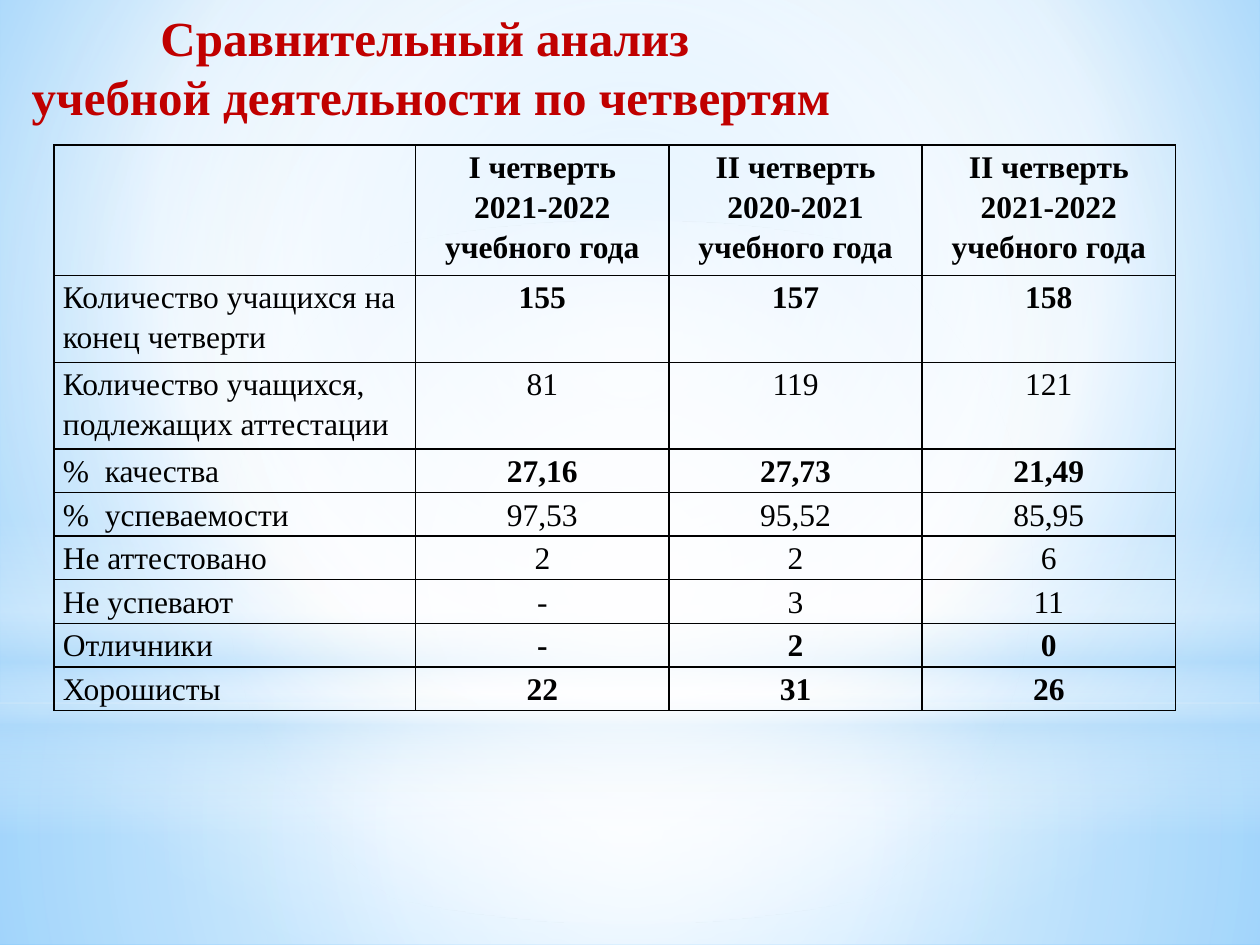
from pptx import Presentation, util as u
from pptx.dml.color import RGBColor
from pptx.enum import shapes, text
from pptx.oxml import parse_xml
from pptx.oxml.ns import nsdecls, qn

COLORS = {"title": "C00000", "ink": "000000", "white": "FFFFFF",
          "sky": "B4DCFA", "light": "9ED5FF", "deep": "5BB9FF"}
FONT = "Times New Roman"
WIDTH, HEIGHT = 10, 7.5

TITLE = ["Сравнительный анализ ", "учебной деятельности по четвертям"]
HEADER = ["", "I четверть\n2021-2022 учебного года",
          "II четверть\n2020-2021 учебного года",
          "II четверть\n2021-2022 учебного года"]
# label, values, bold values
RESULTS = [
    ("Количество учащихся на конец четверти", ["155", "157", "158"], True),
    ("Количество учащихся,\nподлежащих аттестации", ["81", "119", "121"], False),
    ("%  качества", ["27,16", "27,73", "21,49"], True),
    ("%  успеваемости", ["97,53", "95,52", "85,95"], False),
    ("Не аттестовано", ["2", "2", "6"], False),
    ("Не успевают", ["-", "3", "11"], False),
    ("Отличники", ["-", "2", "0"], True),
    ("Хорошисты", ["22", "31", "26"], True),
]
ROW_LINES = [3, 2, 2, 1, 1, 1, 1, 1, 1]
LINE_HEIGHT = 0.345
COLUMNS = [2.87, 2.01, 2.01, 2.01]

# Gradient stops: position %, colour, opacity %
BACKDROP = [(0, "light", 100), (60, "white", 100), (100, "deep", 100)]
CENTRE = (50, 50, 50, 50)
# shape, top and height as shares of the slide, stops, centre (None: vertical)
GLOWS = [
    ("RECTANGLE", 0.744, 0.256,
     [(0, "white", 91), (37, "white", 76), (100, "sky", 79)], CENTRE),
    ("RECTANGLE", 0, 0.744,
     [(0, "white", 89), (48, "white", 62), (100, "sky", 79)], CENTRE),
    ("RECTANGLE", 0.55, 0.333,
     [(0, "white", 0), (29, "white", 30), (45, "sky", 40),
      (55, "white", 26), (65, "sky", 60), (100, "white", 0)], None),
    ("OVAL", 0.233, 0.744, [(0, "white", 100), (56, "white", 0)], CENTRE),
]


def set_gradient(parent, stops, centre):
    """Swap the solid fill inside parent for a gradient."""
    marks = "".join(
        f'<a:gs pos="{pos * 1000}"><a:srgbClr val="{COLORS[name]}">'
        f'<a:alpha val="{alpha * 1000}"/></a:srgbClr></a:gs>'
        for pos, name, alpha in stops)
    if centre:
        sides = " ".join(f'{side}="{share * 1000}"' for side, share in zip("ltrb", centre))
        course = f'<a:path path="circle"><a:fillToRect {sides}/></a:path>'
    else:
        course = '<a:lin ang="5400000" scaled="0"/>'
    solid = parent.find(qn("a:solidFill"))
    parent.replace(solid, parse_xml(
        f'<a:gradFill {nsdecls("a")} rotWithShape="1"><a:gsLst>{marks}</a:gsLst>'
        f'{course}</a:gradFill>'))


def style(para, size, color, bold, align):
    para.alignment = align
    para.font.name, para.font.size, para.font.bold = FONT, u.Pt(size), bold
    para.font.color.rgb = RGBColor.from_string(COLORS[color])


def fill_cell(cell, words, bold, align):
    cell.margin_left = cell.margin_right = u.Inches(0.07)
    cell.margin_top = cell.margin_bottom = 0
    cell.text = words
    for para in cell.text_frame.paragraphs:
        style(para, 18, "ink", bold, align)
        para.line_spacing = 1.15
    props = cell._tc.get_or_add_tcPr()
    for side in "LRTB":
        props.append(parse_xml(
            f'<a:ln{side} {nsdecls("a")} w="12700"><a:solidFill>'
            f'<a:srgbClr val="{COLORS["ink"]}"/></a:solidFill></a:ln{side}>'))
    cell.fill.background()


def add_backdrop(page):
    page.background.fill.solid()
    set_gradient(page._element.find(".//" + qn("p:bgPr")), BACKDROP, (20, 10, 20, 60))
    for kind, top, height, stops, centre in GLOWS:
        glow = page.shapes.add_shape(
            shapes.MSO_SHAPE[kind], 0, u.Inches(top * HEIGHT),
            u.Inches(WIDTH), u.Inches(height * HEIGHT))
        glow.shadow.inherit = False
        glow.line.fill.background()
        glow.fill.solid()
        set_gradient(glow._element.spPr, stops, centre)


def add_title(page):
    box = page.shapes.add_textbox(u.Inches(0.12), u.Inches(0.01), u.Inches(6.6), u.Inches(1.51))
    frame = box.text_frame
    frame.word_wrap = False
    frame.vertical_anchor = text.MSO_ANCHOR.TOP
    frame.text = "\n".join(TITLE)
    for para in frame.paragraphs:
        style(para, 28, "title", True, text.PP_ALIGN.CENTER)


def add_results(page):
    rows = [(HEADER[0], HEADER[1:], True)] + RESULTS
    table = page.shapes.add_table(
        len(rows), len(COLUMNS), u.Inches(0.43), u.Inches(1.15),
        u.Inches(sum(COLUMNS)), u.Inches(sum(ROW_LINES) * LINE_HEIGHT)).table
    table.first_row = table.horz_banding = False
    for column, width in zip(table.columns, COLUMNS):
        column.width = u.Inches(width)
    for row, lines, (label, values, bold) in zip(table.rows, ROW_LINES, rows):
        row.height = u.Inches(lines * LINE_HEIGHT)
        fill_cell(row.cells[0], label, False, text.PP_ALIGN.LEFT)
        for cell, value in zip(list(row.cells)[1:], values):
            fill_cell(cell, value, bold, text.PP_ALIGN.CENTER)


def main():
    deck = Presentation()
    deck.slide_width, deck.slide_height = u.Inches(WIDTH), u.Inches(HEIGHT)
    page = deck.slides.add_slide(deck.slide_layouts[6])
    add_backdrop(page)
    add_title(page)
    add_results(page)
    deck.save("out.pptx")


if __name__ == "__main__":
    main()
